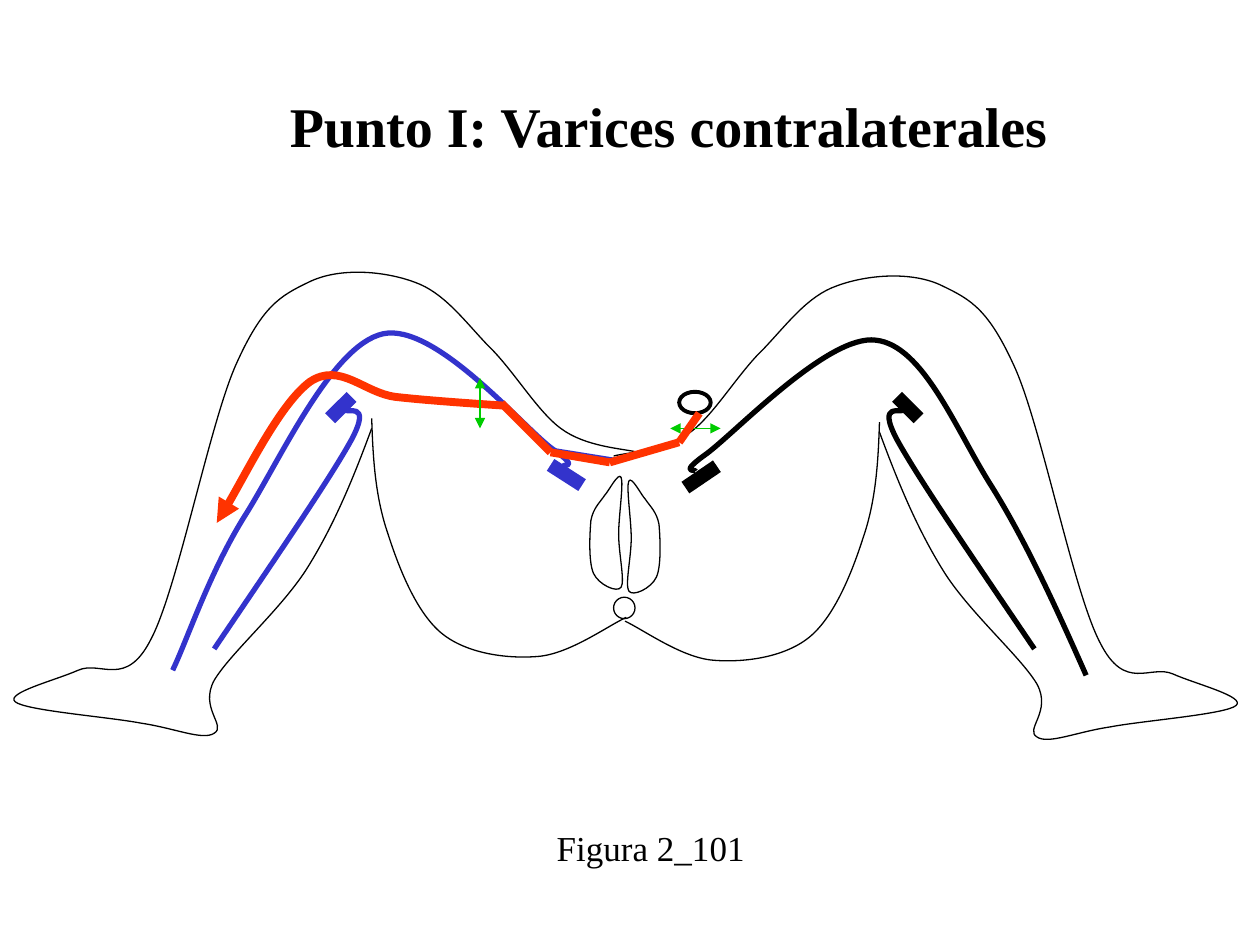
from dataclasses import dataclass

from pptx import Presentation
from pptx.dml.color import RGBColor
from pptx.enum.shapes import MSO_CONNECTOR, MSO_SHAPE
from pptx.enum.text import MSO_AUTO_SIZE, PP_ALIGN
from pptx.oxml.ns import qn
from pptx.oxml.xmlchemy import OxmlElement
from pptx.util import Pt

PX = 9144


@dataclass(frozen=True)
class Theme:
    """Colours, font, type sizes and line weights of the slide."""
    black: str = "000000"
    blue: str = "3333CC"
    red: str = "FF3300"
    green: str = "00CC00"
    font: str = "Times New Roman"
    title: int = 32
    caption: int = 20
    thin: float = 0.75
    ring: float = 2.25
    vein: float = 3
    reflux: float = 4.5
    stump: float = 8


T = Theme()

LEG = [(502, 147), (491, 144), (461, 143), (441, 128), (422, 114), (403, 81), (383, 62),
       (364, 42), (348, 20), (325, 12), (301, 3), (265, 0), (241, 12),
       (218, 23), (204, 31), (183, 78), (162, 126), (137, 255), (116, 295),
       (96, 335), (76, 312), (58, 320), (40, 328), (0, 338), (8, 345),
       (16, 352), (82, 357), (108, 362), (135, 366), (157, 376), (166, 370),
       (176, 364), (154, 350), (166, 328), (179, 306), (221, 270), (241, 237),
       (262, 203), (277, 166), (291, 128)]
BUTTOCK = [(291, 120), (292, 153), (294, 183), (304, 212), (313, 240), (327, 275), (347, 291),
           (367, 307), (399, 311), (423, 309), (448, 307), (478, 285), (493, 278)]
LABIUM = [(13, 19), (9, 25), (4, 29), (2, 39), (1, 50), (0, 72), (4, 81),
          (8, 90), (23, 97), (26, 92), (29, 87), (24, 65), (24, 50),
          (24, 36), (28, 10), (26, 5), (24, 0), (16, 16), (13, 19)]
SMALL_VEIN = [(103, 10), (104, 14), (126, 2), (109, 34), (92, 65), (46, 132), (0, 200)]
SMALL_STUMP = [(109, 0), (92, 17)]
GREAT_VEIN_LEFT = [(310, 114), (309, 112), (325, 117), (301, 100), (277, 82), (208, 0), (167, 9),
                   (126, 18), (85, 110), (57, 154), (29, 199), (12, 251), (0, 276)]
GREAT_STUMP_LEFT = [(300, 113), (325, 129)]
GREAT_VEIN_RIGHT = [(15, 109), (16, 107), (0, 112), (24, 95), (48, 77), (121, 0), (158, 5),
                    (196, 9), (222, 77), (250, 121), (278, 166), (302, 219), (325, 271)]
GREAT_STUMP_RIGHT = [(32, 105), (7, 122)]
VARIX = [(229, 35), (214, 34), (168, 31), (142, 28), (117, 25), (98, 0), (74, 16),
         (51, 33), (15, 105), (0, 128)]


def place(box, pts, flip=False):
    """Turn points of a box into slide points, mirrored left to right if asked."""
    x, y, w, h = box
    return [(x + (w - px if flip else px), y + py) for px, py in pts]


def set_line(sp, color, width, ends=()):
    """Set line colour, weight and triangle arrowheads."""
    sp.line.color.rgb = RGBColor.from_string(color)
    sp.line.width = Pt(width)
    ln = sp._element.spPr.find(qn("a:ln"))
    for end in ends:
        head = OxmlElement(f"a:{end}")
        head.set("type", "triangle")
        ln.append(head)


def add_curve(s, pts, color, width, close=False, ends=()):
    """Draw a chain of cubic curves through start, control and end points."""
    fb = s.shapes.build_freeform(*pts[0], scale=PX)
    fb.add_line_segments(pts[1:], close=close)
    sp = fb.convert_to_shape()
    steps = sp._element.findall(".//" + qn("a:lnTo"))
    for i in range(0, len(steps), 3):
        bez = OxmlElement("a:cubicBezTo")
        steps[i].addprevious(bez)
        for step in steps[i:i + 3]:
            bez.append(step[0])
            step.getparent().remove(step)
    sp.shadow.inherit = False
    sp.fill.background()
    set_line(sp, color, width, ends)


def add_line(s, start, end, color, width, ends=()):
    """Draw a straight connector."""
    pts = [v * PX for v in (*start, *end)]
    sp = s.shapes.add_connector(MSO_CONNECTOR.STRAIGHT, *pts)
    set_line(sp, color, width, ends)
    sp._element.spPr.append(OxmlElement("a:effectLst"))


def add_ring(s, box, width):
    """Draw an unfilled black ellipse."""
    sp = s.shapes.add_shape(MSO_SHAPE.OVAL, *[v * PX for v in box])
    sp.shadow.inherit = False
    sp.fill.background()
    set_line(sp, T.black, width)


def add_label(s, box, text, size, bold=False, align=None, wrap=True):
    """Place one line of text."""
    tf = s.shapes.add_textbox(*[v * PX for v in box]).text_frame
    tf.word_wrap = wrap
    tf.auto_size = MSO_AUTO_SIZE.SHAPE_TO_FIT_TEXT
    p = tf.paragraphs[0]
    p.alignment = align
    r = p.add_run()
    r.text = text
    r.font.name = T.font
    r.font.size = Pt(size)
    r.font.bold = bold
    r.font.color.rgb = RGBColor.from_string(T.black)


def add_leg(s, box, flip=False):
    """Outline one leg with its buttock."""
    for pts in (BUTTOCK, LEG):
        add_curve(s, place(box, pts, flip), T.black, T.thin)


def add_perineum(s, box):
    """Draw the anus and both labia."""
    x, y, w, h = box
    add_ring(s, (x + 20, y + 100, 17, 17), T.thin)
    half = w // 2
    for i, flip in enumerate((False, True)):
        side = (x + i * half, y + i * 3, half, h)
        add_curve(s, place(side, LABIUM, flip), T.black, T.thin, close=True)


def add_vein(s, box, curve, stump, color, flip=False):
    """Draw a saphenous vein and the thick stump at its junction."""
    add_curve(s, place(box, curve, flip), color, T.vein)
    add_line(s, *place(box, stump, flip), color, T.stump)


def add_varix(s, box):
    """Draw the red varicose vein that runs down the thigh."""
    add_curve(s, place(box, VARIX), T.red, T.reflux, ends=("tailEnd",))


def add_double_arrow(s, box):
    """Draw a green double arrow across a box of no width or no height."""
    x, y, w, h = box
    add_line(s, (x, y), (x + w, y + h), T.green, T.thin, ("headEnd", "tailEnd"))


def add_crossing(s, box):
    """Draw the reflux path that crosses from one groin to the other."""
    add_curve(s, place(box, [(41, 37), (41, 37), (66, 41), (91, 45)]), T.blue, T.ring)
    pts = place(box, [(0, 0), (39, 39), (86, 47), (141, 31), (157, 8)])
    for start, end in zip(pts, pts[1:]):
        add_line(s, start, end, T.red, T.reflux)


def main():
    """Build the slide and save it."""
    prs = Presentation()
    prs.slide_width, prs.slide_height = 1000 * PX, 750 * PX
    s = prs.slides.add_slide(prs.slide_layouts[6])
    add_label(s, (153, 68, 756, 63), "Punto I: Varices contralaterales", T.title,
              bold=True, align=PP_ALIGN.CENTER)
    add_label(s, (432, 651, 169, 43), "Figura 2_101", T.caption, wrap=False)
    add_leg(s, (4, 212, 502, 375))
    add_leg(s, (487, 215, 502, 375), flip=True)
    add_perineum(s, (467, 374, 58, 98))
    add_vein(s, (137, 256, 325, 276), GREAT_VEIN_LEFT, GREAT_STUMP_LEFT, T.blue)
    add_varix(s, (172, 287, 229, 128))
    add_vein(s, (170, 315, 125, 200), SMALL_VEIN, SMALL_STUMP, T.blue)
    add_double_arrow(s, (381, 300, 0, 40))
    add_vein(s, (537, 265, 325, 271), GREAT_VEIN_RIGHT, GREAT_STUMP_RIGHT, T.black)
    add_vein(s, (696, 315, 125, 200), SMALL_VEIN, SMALL_STUMP, T.black, flip=True)
    add_double_arrow(s, (532, 340, 40, 0))
    add_ring(s, (539, 311, 25, 17), T.ring)
    add_crossing(s, (398, 320, 157, 47))
    prs.save("out.pptx")


if __name__ == "__main__":
    main()
